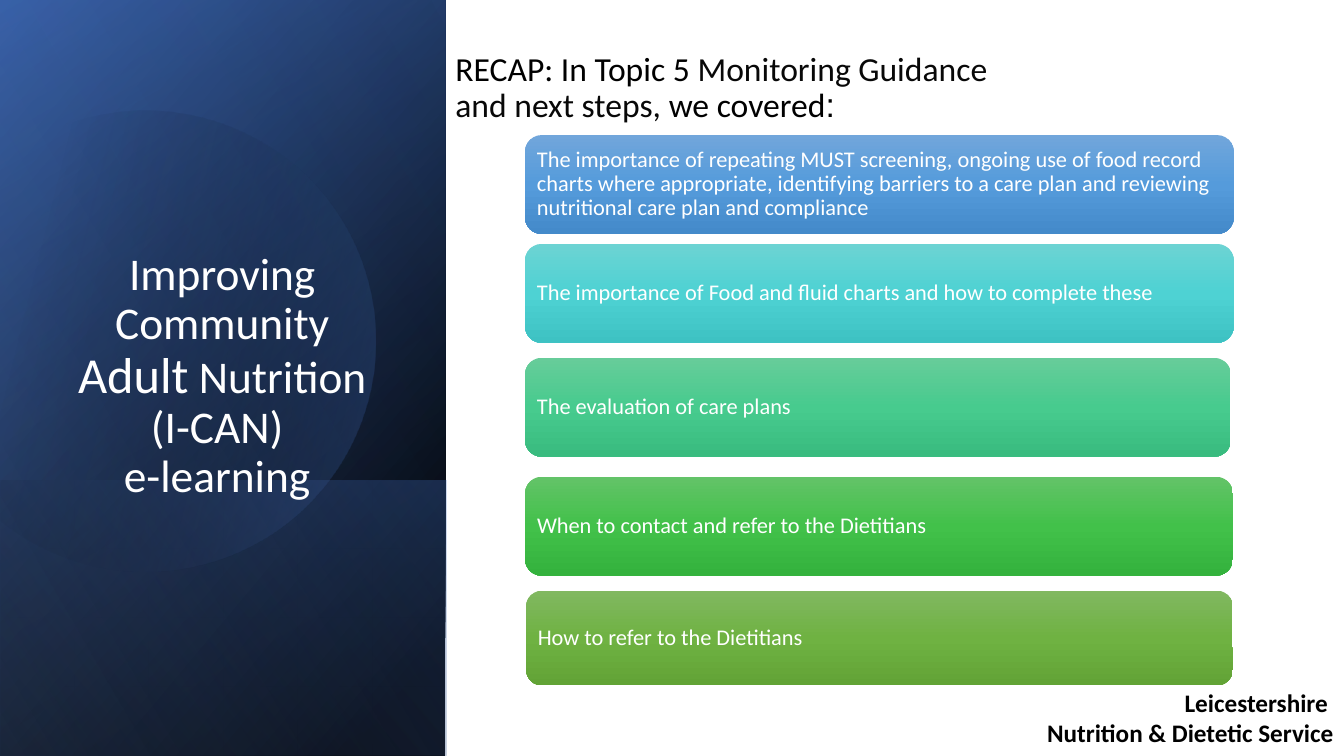
from math import cos, radians, sin, tan

from pptx import Presentation
from pptx.dml.color import RGBColor
from pptx.enum.shapes import MSO_SHAPE
from pptx.enum.text import MSO_ANCHOR, PP_ALIGN
from pptx.oxml.ns import qn
from pptx.oxml.xmlchemy import OxmlElement
from pptx.util import Inches, Pt

PX = 9144  # EMU per px, 100 px to the inch
COLORS = {
    "white": "FFFFFF", "black": "000000", "ink": "080808",
    "navy": "2F5597", "blue": "4472C4", "pale": "8FAADC",
}

# Content: each paragraph is a list of (text, run format)
TITLE = [[("Improving Community ", {}), ("Adult", {"size": 36}),
          (" Nutrition (I-CAN) \ve-learning ", {})]]
RECAP = [[("RECAP: In Topic 5 ", {}),
          ("Monitoring Guidance and next steps, ", {"color": "ink"}),
          ("we covered", {}), (":", {"font": "Arial"})]]
SERVICE = [[("Leicestershire ", {})], [("Nutrition & Dietetic Service", {})]]

# Covered points: text, box (left, top, width, height), gradient colours
POINTS = [
    ("The importance of repeating MUST screening, ongoing use of food record charts "
     "where appropriate, identifying barriers to a care plan and reviewing "
     "nutritional care plan and compliance",
     (521, 134, 703, 98), ("71A6DB", "559BDB", "448ACA")),
    ("The importance of Food and fluid charts and how to complete these",
     (521, 242, 703, 98), ("6CD3D3", "4ED2D3", "3EC2C3")),
    ("The evaluation of care plans",
     (521, 355, 700, 98), ("67CC9A", "47CB8E", "39BB7F")),
    ("When to contact and refer to the Dietitians",
     (521, 473, 702, 98), ("63C368", "42C14A", "34B23D")),
    ("How to refer to the Dietitians",
     (522, 586, 701, 94), ("81B861", "6FB242", "62A336")),
]

# Side panel layers: box, gradient stops (position, colour, opacity), angle
PANEL = (-154, 154, 750, 442)
PANEL_LAYERS = [
    (PANEL, [(8, "black", 100), (100, "navy", 100)], 50),
    (PANEL, [(0, "black", 0), (99, "blue", 46)], 30),
    ((85, 392, 273, 442), [(2, "blue", 29), (100, "black", 30)], 130),
]
DISC_STOPS = [(29, "black", 0), (100, "blue", 43)]
DISC_CENTER, DISC_RADIUS, DISC_TURN = (143.5, 334.5), 228.5, 343.9
DISC_ANGLES = (-118, -90, 0, 90, 150)
SHEEN = (PANEL, [(0, "black", 0), (99, "pale", 11)], 120)

prs = Presentation()
prs.slide_height = Inches(7.5)
prs.slide_width = prs.slide_height * 16 // 9
slide = prs.slides.add_slide(prs.slide_layouts[6])


def paint(shape, stops, angle):
    """Fill with a linear gradient; no outline and no shadow."""
    shape.shadow.inherit = False
    shape.line.fill.background()
    shape.fill.gradient()
    gradient = shape._element.spPr.find(qn("a:gradFill"))
    stop_list = gradient.find(qn("a:gsLst"))
    for old_stop in list(stop_list):
        stop_list.remove(old_stop)
    for position, color, opacity in stops:
        stop = OxmlElement("a:gs")
        stop.set("pos", str(position * 1000))
        rgb = OxmlElement("a:srgbClr")
        rgb.set("val", COLORS.get(color, color))
        if opacity < 100:
            alpha = OxmlElement("a:alpha")
            alpha.set("val", str(opacity * 1000))
            rgb.append(alpha)
        stop.append(rgb)
        stop_list.append(stop)
    gradient.find(qn("a:lin")).set("ang", str(angle * 60000))


def add_box(kind, box):
    return slide.shapes.add_shape(kind, *(n * PX for n in box))


def add_layer(box, stops, angle):
    layer = add_box(MSO_SHAPE.RECTANGLE, box)
    layer.rotation = 90
    layer._element.spPr.find(qn("a:xfrm")).set("flipH", "1")
    paint(layer, stops, angle)


def rim_point(angle, pull=0):
    """Point on the disc rim, moved along the tangent by pull radii."""
    a = radians(angle)
    x = DISC_CENTER[0] + DISC_RADIUS * (cos(a) - pull * sin(a))
    y = DISC_CENTER[1] + DISC_RADIUS * (sin(a) + pull * cos(a))
    return round(x * PX), round(y * PX)


def add_disc():
    """Circle cut by a chord: straight sides are bent into arcs."""
    rim = [rim_point(angle) for angle in DISC_ANGLES]
    outline = slide.shapes.build_freeform(*rim[0])
    outline.add_line_segments(rim[1:], close=True)
    disc = outline.convert_to_shape()
    sides = list(disc._element.iter(qn("a:lnTo")))
    for side, start, end in zip(sides, DISC_ANGLES, DISC_ANGLES[1:]):
        pull = 4 / 3 * tan(radians(end - start) / 4)
        arc = OxmlElement("a:cubicBezTo")
        for x, y in (rim_point(start, pull), rim_point(end, -pull), rim_point(end)):
            point = OxmlElement("a:pt")
            point.set("x", str(x - disc.left))
            point.set("y", str(y - disc.top))
            arc.append(point)
        side.getparent().replace(side, arc)
    disc.rotation = DISC_TURN
    paint(disc, DISC_STOPS, 30)


def write(shape, paragraphs, size, color="black", font="Calibri", bold=False,
          align=PP_ALIGN.LEFT, anchor=MSO_ANCHOR.TOP, spacing=None, inset=None):
    frame = shape.text_frame
    frame.word_wrap = True
    frame.vertical_anchor = anchor
    if inset is not None:
        frame.margin_left = frame.margin_right = inset * PX
        frame.margin_top = frame.margin_bottom = inset * PX
    for i, runs in enumerate(paragraphs):
        paragraph = frame.add_paragraph() if i else frame.paragraphs[0]
        paragraph.alignment = align
        paragraph.line_spacing = spacing
        for text, own in runs:
            for j, line in enumerate(text.split("\v")):
                if j:
                    paragraph.add_line_break()
                run = paragraph.add_run()
                run.text = line
                run.font.size = Pt(own.get("size", size))
                run.font.name = own.get("font", font)
                run.font.bold = bold
                run.font.color.rgb = RGBColor.from_string(COLORS[own.get("color", color)])


def add_text(box, paragraphs, size, **style):
    write(slide.shapes.add_textbox(*(n * PX for n in box)), paragraphs, size, **style)


# Side panel with a disc cut off on its left
for layer in PANEL_LAYERS:
    add_layer(*layer)
add_disc()
add_layer(*SHEEN)
add_text((50, 297, 341, 206), TITLE, 32.4, color="white", align=PP_ALIGN.CENTER,
         anchor=MSO_ANCHOR.BOTTOM, spacing=0.9)

# Covered points
for point, box, shades in POINTS:
    card = add_box(MSO_SHAPE.ROUNDED_RECTANGLE, box)
    paint(card, [(pos, shade, 100) for pos, shade in zip((0, 50, 100), shades)], 90)
    write(card, [[(point, {})]], 16, color="white", anchor=MSO_ANCHOR.MIDDLE,
          spacing=0.9, inset=7)

# Heading and service name
add_text((442, 34, 603, 95), RECAP, 24, anchor=MSO_ANCHOR.BOTTOM, spacing=0.9)
add_text((510, 677, 823, 71), SERVICE, 18, bold=True, align=PP_ALIGN.RIGHT)

prs.save("out.pptx")
